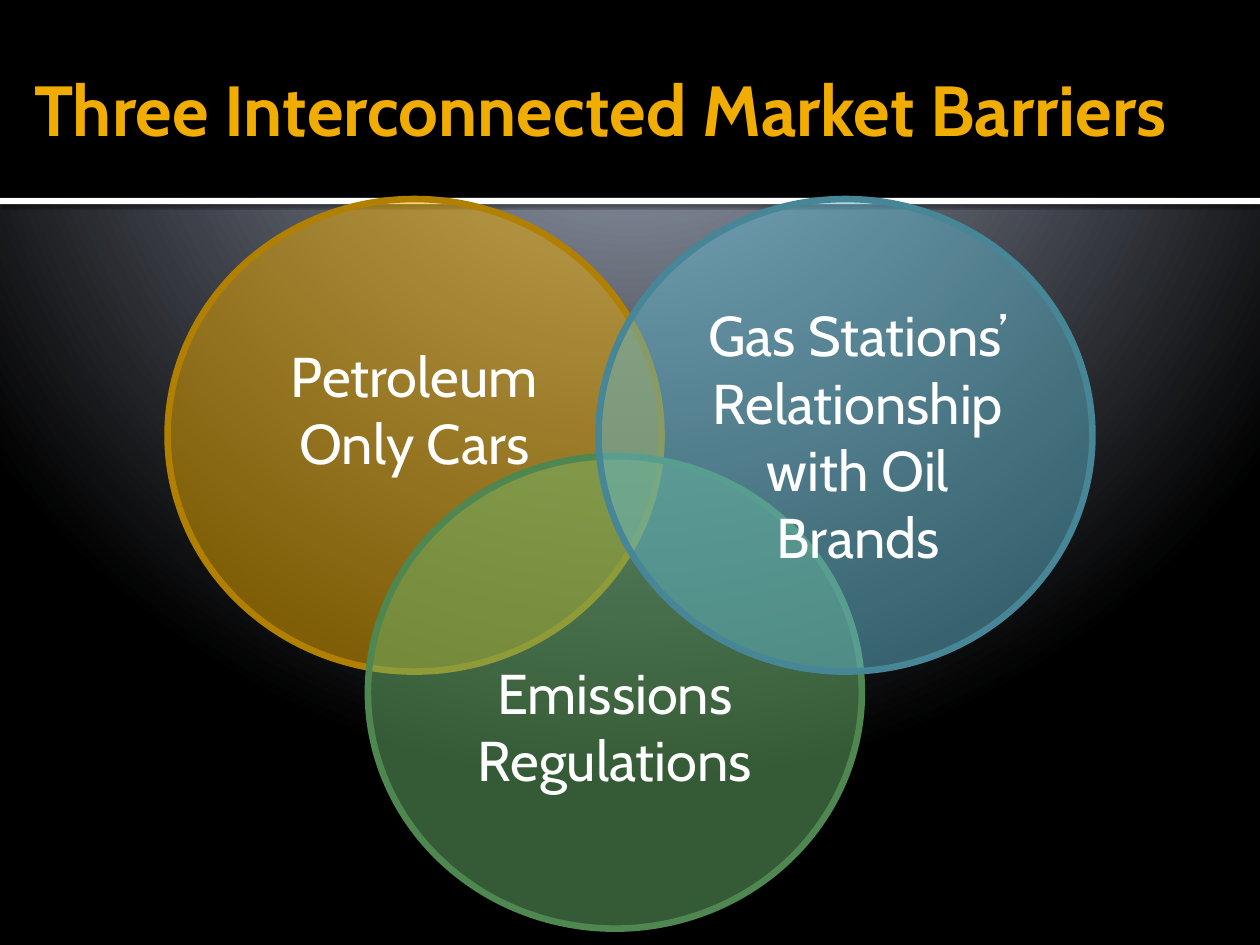
from lxml import etree
from pptx import Presentation
from pptx.dml.color import RGBColor
from pptx.enum.shapes import MSO_SHAPE as SHAPE
from pptx.enum.text import MSO_ANCHOR as ANCHOR, PP_ALIGN as ALIGN
from pptx.oxml import parse_xml
from pptx.oxml.ns import nsdecls, qn
from pptx.util import Inches, Pt

FONT = "Cabin"
COLORS = {
    "white": "FFFFFF", "black": "000000", "title": "F0AD00",
    "gold": "F0AD00", "gold_edge": "B28000",
    "green": "6BB76D", "green_edge": "4F8751",
    "blue": "60B5CC", "blue_edge": "478697",
}
TITLE = "Three Interconnected Market Barriers"
GLOW = [(0, "C0C0C0"), (7, "C0C0C0"), (7, "98A0B2"), (100, "000000")]
BAND_HEIGHT, RULE_HEIGHT = 1.57, 0.05
CIRCLE_W, CIRCLE_H = 3.92, 3.75

# Circles from back to front: paragraphs, colour, left, top, anchor, text insets
CIRCLES = [
    (["Petroleum Only Cars"], "gold", 1.33, 1.58, ANCHOR.TOP, (0.1, 0.58, 0.1, 0.05)),
    (["Emissions Regulations"], "green", 2.92, 3.62, ANCHOR.MIDDLE, (0.1, 0.58, 0.1, 0.05)),
    (["Gas Stations’", "Relationship with Oil Brands"], "blue", 4.75, 1.58,
     ANCHOR.MIDDLE, (0.2, 0.05, 0, 0.05)),
]


def rgb(name):
    return RGBColor.from_string(COLORS[name])


def write_text(shape, paragraphs, size, color, align, anchor, insets, bold=False):
    tf = shape.text_frame
    tf.word_wrap = True
    tf.vertical_anchor = anchor
    tf.margin_left, tf.margin_top, tf.margin_right, tf.margin_bottom = map(Inches, insets)
    for i, text in enumerate(paragraphs):
        p = tf.paragraphs[0] if i == 0 else tf.add_paragraph()
        p.alignment = align
        r = p.add_run()
        r.text = text
        r.font.name, r.font.size, r.font.bold = FONT, Pt(size), bold
        r.font.color.rgb = rgb(color)


def add_filled(slide, kind, box, color):
    sp = slide.shapes.add_shape(kind, *map(Inches, box))
    sp.shadow.inherit = False
    sp.fill.solid()
    sp.fill.fore_color.rgb = rgb(color)
    sp.line.fill.background()
    return sp


def set_glow_background(slide):
    """Radial gradient centred above the top edge of the slide."""
    slide.background.fill.gradient()
    old = next(slide.element.iter(qn("a:gradFill")))
    stops = "".join(f'<a:gs pos="{pos * 1000}"><a:srgbClr val="{color}"/></a:gs>'
                    for pos, color in GLOW)
    old.getparent().replace(old, parse_xml(
        f'<a:gradFill {nsdecls("a")} rotWithShape="1"><a:gsLst>{stops}</a:gsLst>'
        '<a:path path="circle"><a:fillToRect l="10000" t="-25000" r="10000" b="125000"/>'
        '</a:path></a:gradFill>'))


def add_header(slide):
    rule = add_filled(slide, SHAPE.RECTANGLE, (0, BAND_HEIGHT, 10, RULE_HEIGHT), "white")
    effects = rule.element.spPr.find(qn("a:effectLst"))
    effects.append(parse_xml(
        f'<a:outerShdw {nsdecls("a")} blurRad="{Pt(2.5)}" dist="{Pt(0.8)}" dir="5400000">'
        f'<a:srgbClr val="{COLORS["black"]}"><a:alpha val="60000"/></a:srgbClr></a:outerShdw>'))
    band = add_filled(slide, SHAPE.RECTANGLE, (0, 0, 10, BAND_HEIGHT), "black")

    title = slide.shapes.title
    title.left, title.top, title.width, title.height = map(Inches, (0.17, 0.17, 9.75, 1.37))
    write_text(title, [TITLE], 40.5, "title", ALIGN.LEFT, ANCHOR.MIDDLE,
               (0.1, 0.05, 0.05, 0.05), bold=True)
    for bar in (rule, band):  # the title sits in front of the bars
        title.element.addprevious(bar.element)


def add_circle(slide, paragraphs, color, left, top, anchor, insets):
    sp = add_filled(slide, SHAPE.OVAL, (left, top, CIRCLE_W, CIRCLE_H), color)
    fill_color = sp.element.spPr.find(qn("a:solidFill"))[0]
    etree.SubElement(fill_color, qn("a:alpha"), val="50000")
    sp.line.color.rgb = rgb(f"{color}_edge")
    sp.line.width = Pt(3.78)
    write_text(sp, paragraphs, 32, "white", ALIGN.CENTER, anchor, insets)


def main():
    prs = Presentation()
    prs.slide_width, prs.slide_height = Inches(10), Inches(7.5)
    slide = prs.slides.add_slide(prs.slide_layouts[5])
    set_glow_background(slide)
    add_header(slide)
    for circle in CIRCLES:
        add_circle(slide, *circle)
    prs.save("out.pptx")


if __name__ == "__main__":
    main()
